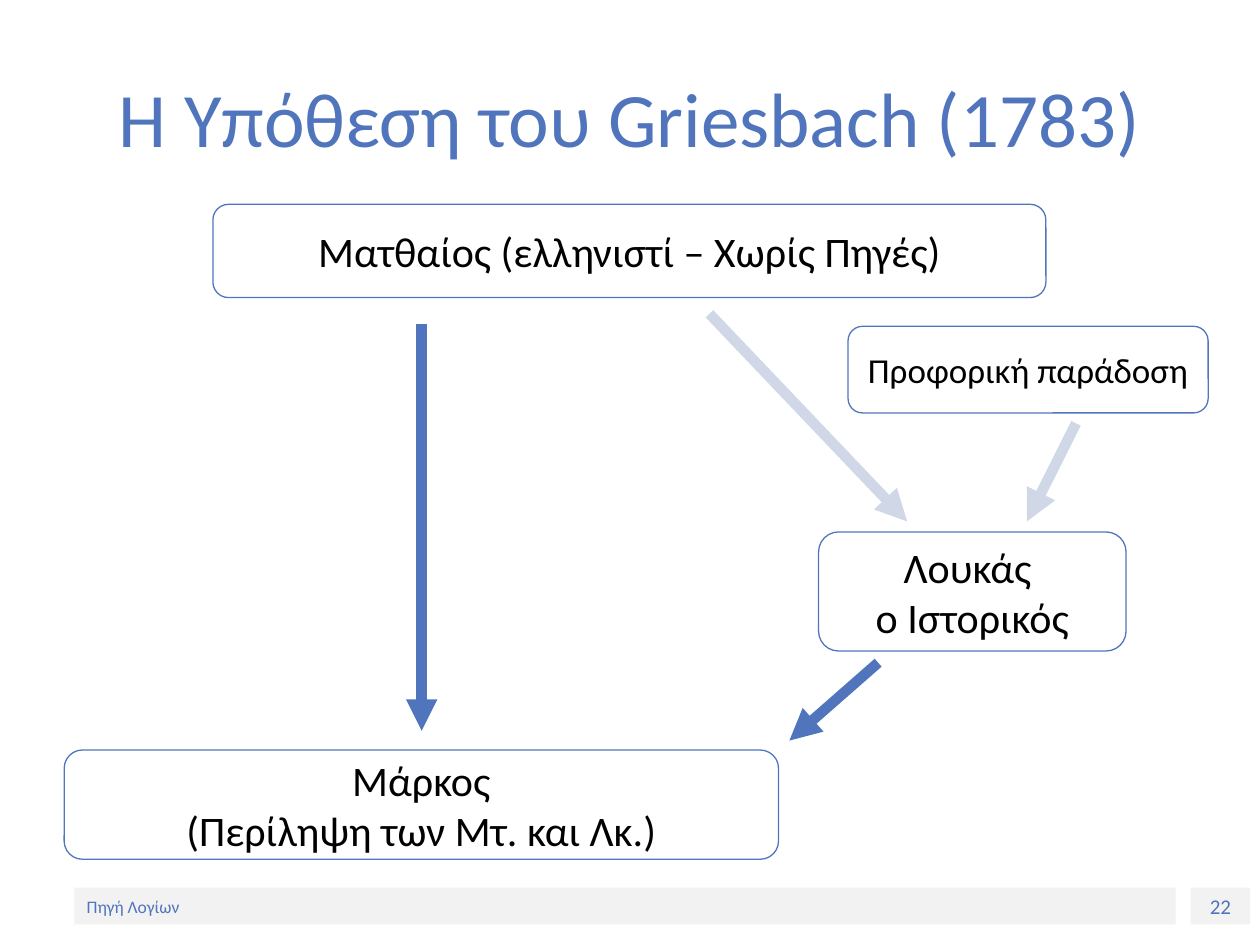
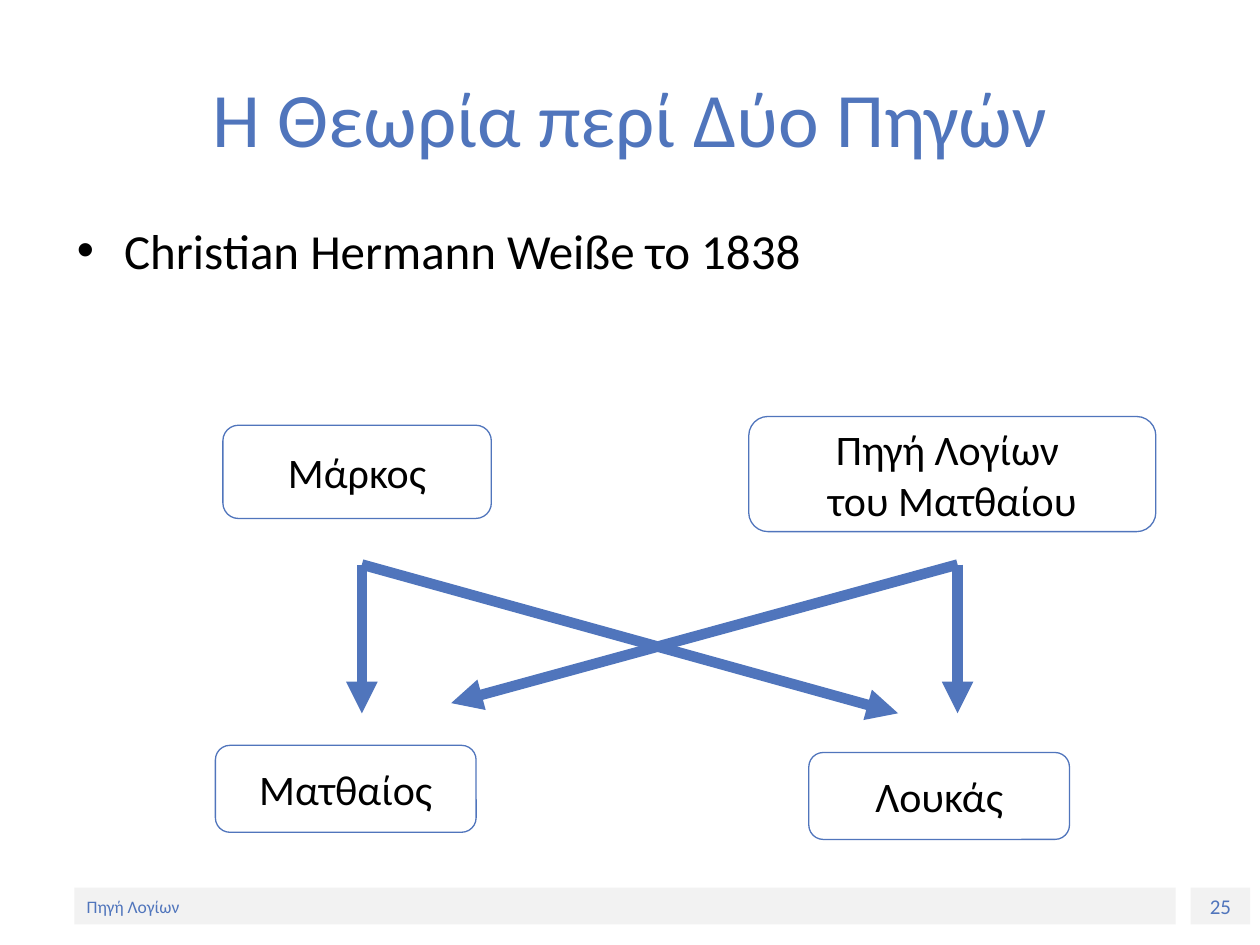
from dataclasses import dataclass
from lxml.etree import SubElement
from pptx import Presentation
from pptx.dml.color import RGBColor
from pptx.enum.shapes import MSO_CONNECTOR, MSO_SHAPE
from pptx.enum.text import MSO_ANCHOR, MSO_AUTO_SIZE, PP_ALIGN
from pptx.oxml.ns import qn
from pptx.util import Pt


@dataclass(frozen=True)
class Theme:
    font: str = "Calibri"
    accent: RGBColor = RGBColor.from_string("5075BC")
    pale: RGBColor = RGBColor.from_string("D0D8E8")
    band: RGBColor = RGBColor.from_string("F2F2F2")
    ink: RGBColor = RGBColor.from_string("000000")
    title_size: int = 44
    body_size: int = 28
    box_size: int = 24
    small_box_size: int = 20
    number_size: int = 12
    footer_size: int = 10
    outline: float = 0.75
    arrow: int = 6


THEME = Theme()
TITLE_ONLY, TITLE_AND_BODY = 5, 1


def write_text(frame, text, *, size, color=THEME.ink, align=PP_ALIGN.CENTER,
               anchor=MSO_ANCHOR.MIDDLE, wrap=True, insets=(7.2, 3.6), bullet_indent=0):
    frame.auto_size = MSO_AUTO_SIZE.NONE
    frame.word_wrap = wrap
    frame.vertical_anchor = anchor
    frame.margin_left = frame.margin_right = Pt(insets[0])
    frame.margin_top = frame.margin_bottom = Pt(insets[1])
    frame.text = text
    for paragraph in frame.paragraphs:
        paragraph.alignment = align
        paragraph.space_before = Pt(0)
        if bullet_indent:
            add_bullet(paragraph, bullet_indent)
        for run in paragraph.runs:
            run.font.name = THEME.font
            run.font.size = Pt(size)
            run.font.color.rgb = color


def add_bullet(paragraph, indent):
    properties = paragraph._p.get_or_add_pPr()
    properties.set("marL", str(Pt(indent)))
    properties.set("indent", str(-Pt(indent)))
    SubElement(properties, qn("a:buFont")).set("typeface", "Arial")
    SubElement(properties, qn("a:buChar")).set("char", "•")


def place(shape, left, top, width, height):
    shape.left, shape.top = Pt(left), Pt(top)
    shape.width, shape.height = Pt(width), Pt(height)


def add_band(slide, bounds, text, **text_format):
    band = slide.shapes.add_shape(MSO_SHAPE.RECTANGLE, *map(Pt, bounds))
    band.shadow.inherit = False
    band.fill.solid()
    band.fill.fore_color.rgb = THEME.band
    band.line.fill.background()
    write_text(band.text_frame, text, color=THEME.accent, **text_format)


def add_source_box(slide, bounds, text, size=THEME.box_size):
    box = slide.shapes.add_shape(MSO_SHAPE.ROUNDED_RECTANGLE, *map(Pt, bounds))
    box.shadow.inherit = False
    box.fill.background()
    box.line.color.rgb = THEME.accent
    box.line.width = Pt(THEME.outline)
    write_text(box.text_frame, text, size=size, wrap=False, insets=(10, 5))


def add_arrow(slide, start, end, color=THEME.accent):
    arrow = slide.shapes.add_connector(MSO_CONNECTOR.STRAIGHT, *map(Pt, (*start, *end)))
    arrow.line.color.rgb = color
    arrow.line.width = Pt(THEME.arrow)
    SubElement(arrow.line._get_or_add_ln(), qn("a:tailEnd")).set("type", "triangle")
    SubElement(arrow._element.spPr, qn("a:effectLst"))


def add_titled_slide(deck, layout, title, number):
    slide = deck.slides.add_slide(deck.slide_layouts[layout])
    place(slide.shapes.title, 36, 21.6, 648, 90)
    write_text(slide.shapes.title.text_frame, title, size=THEME.title_size, color=THEME.accent)
    add_band(slide, (680.4, 507.2, 34, 21), number, size=THEME.number_size)
    add_band(slide, (42.5, 507.2, 629.3, 21), "Πηγή Λογίων",
             size=THEME.footer_size, align=PP_ALIGN.LEFT)
    return slide


def build_griesbach(deck):
    slide = add_titled_slide(deck, TITLE_ONLY, "Η Υπόθεση του Griesbach (1783)", "22")
    add_arrow(slide, (241, 185), (241, 417.6))
    add_arrow(slide, (405.4, 179.3), (518.4, 298))
    add_arrow(slide, (501.8, 378.7), (451.1, 423.2))
    add_arrow(slide, (614.9, 241.9), (586.8, 298))
    for pale_arrow in (slide.shapes[-3], slide.shapes[-1]):
        pale_arrow.line.color.rgb = THEME.pale
    add_source_box(slide, (121.7, 116.8, 476, 53.3), "Ματθαίος (ελληνιστί – Χωρίς Πηγές)")
    add_source_box(slide, (484.6, 186.5, 205.8, 49.5), "Προφορική παράδοση",
                   THEME.small_box_size)
    add_source_box(slide, (467.8, 304, 175.7, 68), "Λουκάς \nο Ιστορικός")
    add_source_box(slide, (36.7, 428.6, 408.2, 62.4), "Mάρκος\v(Περίληψη των Μτ. και Λκ.)")


def build_two_sources(deck):
    slide = add_titled_slide(deck, TITLE_AND_BODY, "Η Θεωρία περί Δύο Πηγών", "25")
    body = slide.placeholders[1]
    place(body, 36.7, 122.4, 648, 356.4)
    write_text(body.text_frame, "Christian Hermann Weiße το 1838", size=THEME.body_size,
               align=PP_ALIGN.LEFT, anchor=MSO_ANCHOR.TOP, bullet_indent=27)
    add_source_box(slide, (427.9, 238, 232.6, 65.8), "Πηγή Λογίων \nτου Ματθαίου")
    add_source_box(slide, (127.4, 243, 153.4, 53.3), "Μάρκος")
    add_source_box(slide, (123.1, 425.9, 149, 49.7), "Ματθαίος")
    add_source_box(slide, (462.2, 430, 149, 49.7), "Λουκάς")
    mark, sayings = (206.8, 322.6), (547.2, 322.6)
    arrow_end = 407.6
    add_arrow(slide, mark, (mark[0], arrow_end))
    add_arrow(slide, sayings, (257.8, 401.8))
    add_arrow(slide, mark, (513.2, arrow_end))
    add_arrow(slide, sayings, (sayings[0], arrow_end))


def main():
    deck = Presentation()
    deck.slide_width, deck.slide_height = Pt(720), Pt(540)
    build_griesbach(deck)
    build_two_sources(deck)
    deck.save("out.pptx")


if __name__ == "__main__":
    main()
